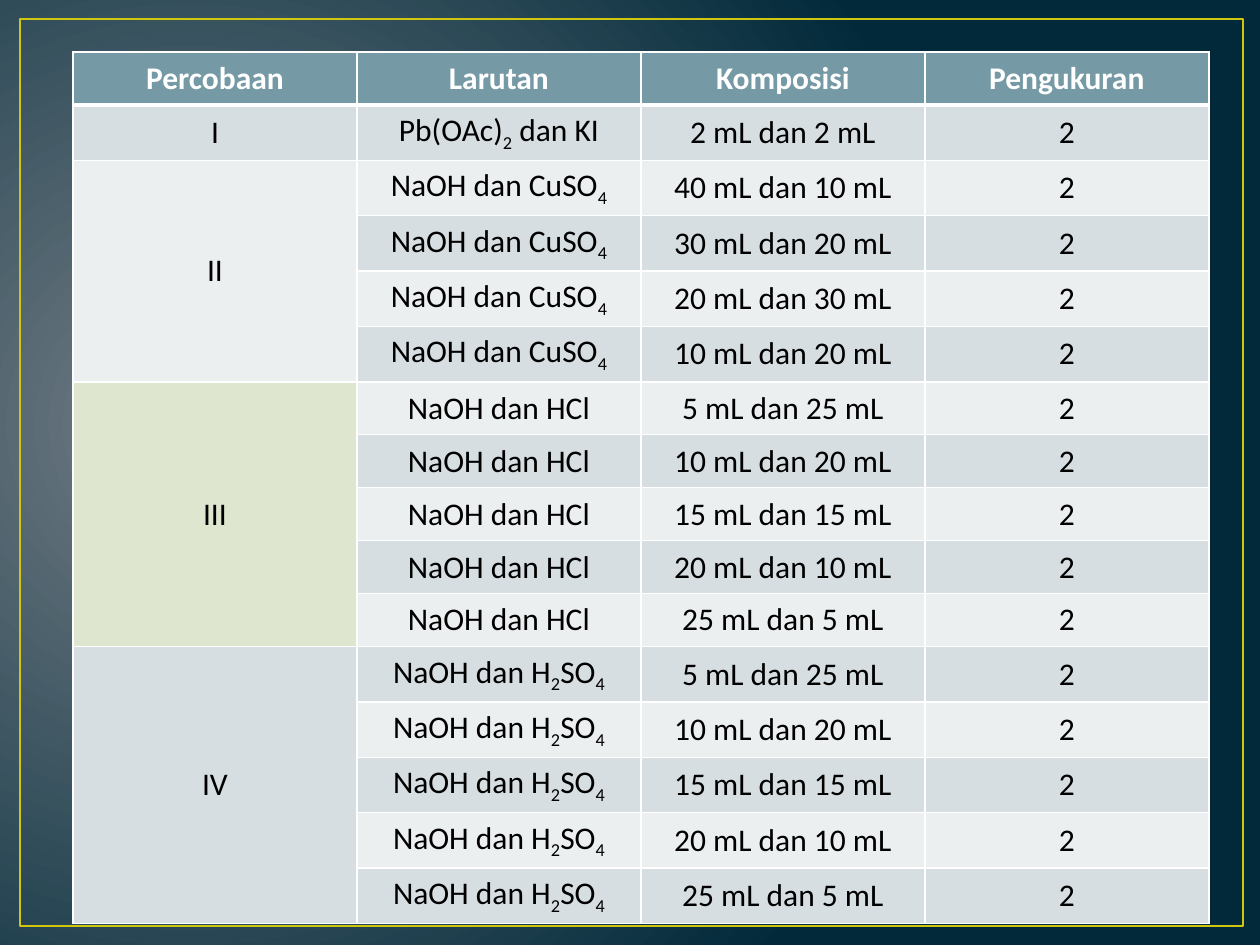
import pptx
import pptx.util
import pptx.dml.color
import pptx.enum.shapes
import pptx.enum.text
import pptx.oxml
import pptx.oxml.ns
from lxml import etree

RGB = pptx.dml.color.RGBColor
GLOW = RGB(0x71, 0x7C, 0x84)
NAVY = RGB(0x01, 0x29, 0x3A)
YELLOW = RGB(0xCF, 0xC6, 0x0D)
WHITE = RGB(0xFF, 0xFF, 0xFF)
BLACK = RGB(0, 0, 0)
TEAL = RGB(0x75, 0x9A, 0xA5)
DARK_BAND = RGB(0xD6, 0xDE, 0xE1)
LIGHT_BAND = RGB(0xEC, 0xEF, 0xF0)
GREEN = RGB(0xDF, 0xE6, 0xD0)

FONT = "Calibri"
PX = 914400 // 126
COL_W, ROW_H = 284, 53

HEADINGS = ["Percobaan", "Larutan", "Komposisi", "Pengukuran"]
# Experiment, solution (the character after _ is a subscript), volumes in mL
EXPERIMENTS = [
    ("I", "Pb(OAc)_2 dan KI", [(2, 2)]),
    ("II", "NaOH dan CuSO_4", [(40, 10), (30, 20), (20, 30), (10, 20)]),
    ("III", "NaOH dan HCl", [(5, 25), (10, 20), (15, 15), (20, 10), (25, 5)]),
    ("IV", "NaOH dan H_2SO_4", [(5, 25), (10, 20), (15, 15), (20, 10), (25, 5)]),
]
MEASUREMENTS = "2"


def set_background(s):
    fill = s.background.fill
    fill.gradient()
    for stop, color in zip(fill.gradient_stops, (GLOW, NAVY)):
        stop.color.rgb = color
    # Turn the linear gradient into a circular one
    lin = next(s.element.iter(pptx.oxml.ns.qn("a:lin")))
    circle = pptx.oxml.parse_xml(
        f'<a:path {pptx.oxml.ns.nsdecls("a")} path="circle">'
        '<a:fillToRect l="15000" t="50000" r="85000" b="60000"/></a:path>')
    lin.getparent().replace(lin, circle)


def add_frame(s, x, y, w, h):
    sp = s.shapes.add_shape(pptx.enum.shapes.MSO_SHAPE.RECTANGLE,
                            x * PX, y * PX, w * PX, h * PX)
    sp.shadow.inherit = False
    sp.fill.background()
    sp.line.color.rgb = YELLOW
    sp.line.width = pptx.util.Pt(1.5)


def add_run(p, text, color, bold, subscript=False):
    r = p.add_run()
    r.text = text
    r.font.name = FONT
    r.font.size = pptx.util.Pt(18)
    r.font.bold = bold
    r.font.color.rgb = color
    if subscript:
        r.font._element.set("baseline", "-25000")


def set_borders(cell, top=1, bottom=1):
    tcPr = cell._tc.get_or_add_tcPr()
    for side, width in (("L", 1), ("R", 1), ("T", top), ("B", bottom)):
        ln = etree.SubElement(tcPr, pptx.oxml.ns.qn(f"a:ln{side}"),
                              w=str(pptx.util.Pt(width)))
        solid = etree.SubElement(ln, pptx.oxml.ns.qn("a:solidFill"))
        etree.SubElement(solid, pptx.oxml.ns.qn("a:srgbClr"), val=str(WHITE))


def fill_cell(cell, text, fill, color=BLACK, bold=False):
    cell.fill.solid()
    cell.fill.fore_color.rgb = fill
    cell.vertical_anchor = pptx.enum.text.MSO_ANCHOR.MIDDLE
    p = cell.text_frame.paragraphs[0]
    p.alignment = pptx.enum.text.PP_ALIGN.CENTER
    first, *rest = text.split("_")
    add_run(p, first, color, bold)
    for part in rest:
        add_run(p, part[0], color, bold, subscript=True)
        if part[1:]:
            add_run(p, part[1:], color, bold)


def add_experiment_table(s, x, y):
    n_rows = 1 + sum(len(volumes) for _, _, volumes in EXPERIMENTS)
    n_cols = len(HEADINGS)
    table = s.shapes.add_table(n_rows, n_cols, x * PX, y * PX,
                               n_cols * COL_W * PX, n_rows * ROW_H * PX).table
    table.horz_banding = False
    for col in table.columns:
        col.width = COL_W * PX
    for i, row in enumerate(table.rows):
        row.height = ROW_H * PX
        for cell in row.cells:
            set_borders(cell, top=3 if i == 1 else 1, bottom=3 if i == 0 else 1)

    # Header row
    for j, heading in enumerate(HEADINGS):
        fill_cell(table.cell(0, j), heading, TEAL, WHITE, bold=True)

    # One merged label per experiment, one banded row per composition
    i = 1
    for label, solution, volumes in EXPERIMENTS:
        band = DARK_BAND if i % 2 else LIGHT_BAND
        head = table.cell(i, 0)
        if len(volumes) > 1:
            head.merge(table.cell(i + len(volumes) - 1, 0))
        fill_cell(head, label, GREEN if label == "III" else band)
        for a, b in volumes:
            band = DARK_BAND if i % 2 else LIGHT_BAND
            values = (solution, f"{a} mL dan {b} mL", MEASUREMENTS)
            for j, text in enumerate(values, start=1):
                fill_cell(table.cell(i, j), text, band)
            i += 1


def main():
    prs = pptx.Presentation()
    prs.slide_width = 1260 * PX
    prs.slide_height = 945 * PX
    s = prs.slides.add_slide(prs.slide_layouts[6])
    set_background(s)
    add_frame(s, 20, 19, 1223, 907)
    add_experiment_table(s, 73, 52)
    prs.save("out.pptx")


if __name__ == "__main__":
    main()
